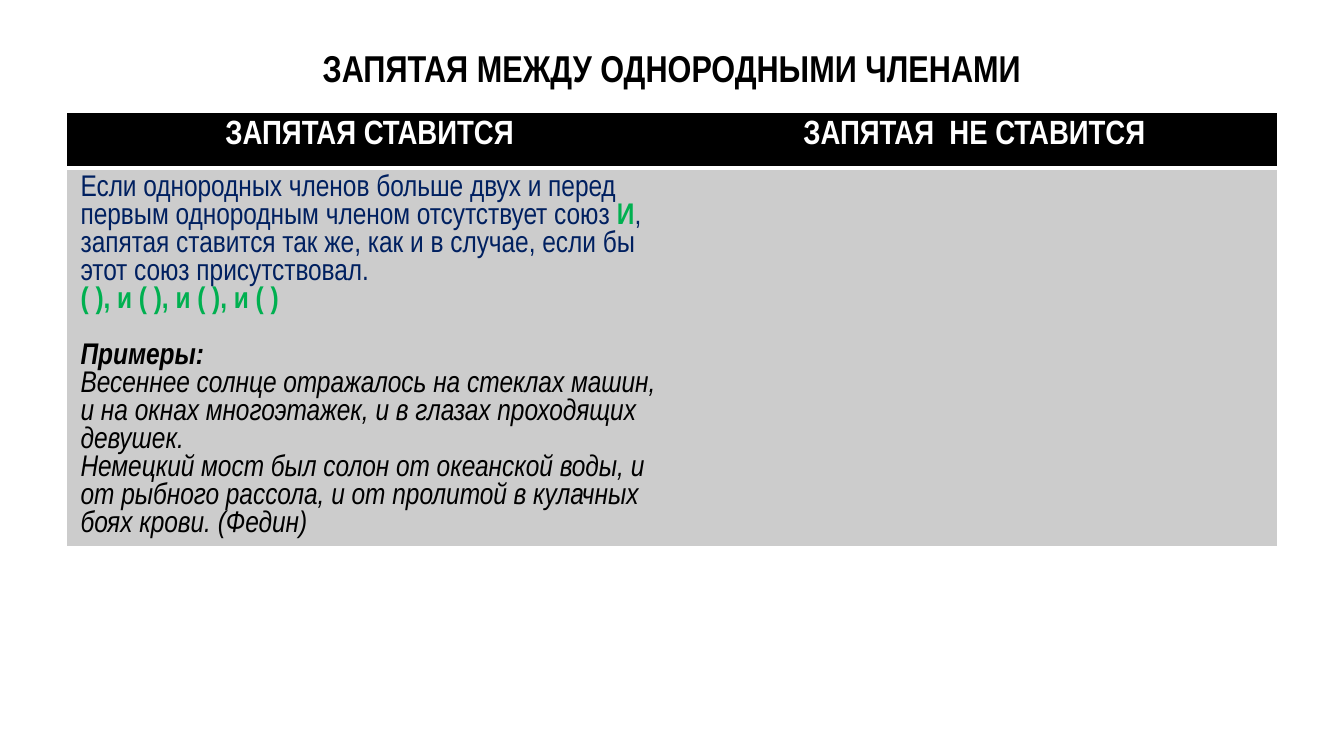
from dataclasses import dataclass

from lxml.etree import SubElement
from pptx import Presentation
from pptx.dml.color import RGBColor
from pptx.enum.text import MSO_ANCHOR, PP_ALIGN
from pptx.oxml.ns import qn
from pptx.util import Pt

NO_STYLE_NO_GRID = "{2D5ABB26-0587-4C30-8999-92F81FD0307C}"


@dataclass(frozen=True)
class Theme:
    font: str = "Arial Narrow"
    title_size: int = 20
    header_size: int = 18
    body_size: int = 16
    black: str = "000000"
    white: str = "FFFFFF"
    navy: str = "002060"
    green: str = "00B050"
    grey: str = "CCCCCC"


THEME = Theme()

HEADERS = ["ЗАПЯТАЯ СТАВИТСЯ", "ЗАПЯТАЯ  НЕ СТАВИТСЯ"]

# Each paragraph: space before, then runs of (text, colour, bold, italic)
RULE_PARAGRAPHS = [
    (0, [
        ("Если однородных членов больше двух и перед первым однородным "
         "членом отсутствует союз ", THEME.navy, False, False),
        ("И", THEME.green, True, False),
        (", запятая ставится так же, как и в случае, если бы этот союз "
         "присутствовал.", THEME.navy, False, False),
    ]),
    (0, [("( ), и ( ), и ( ), и ( )", THEME.green, True, False)]),
    (15, [("Примеры:", THEME.black, True, True)]),
    (0, [("Весеннее солнце отражалось на стеклах машин, и на окнах "
          "многоэтажек, и в глазах проходящих девушек.",
          THEME.black, False, True)]),
    (0, [("Немецкий мост был солон от океанской воды, и от рыбного рассола, "
          "и от пролитой в кулачных боях крови. (Федин)",
          THEME.black, False, True)]),
]


def add_run(paragraph, text, size, color, bold=False, italic=False):
    run = paragraph.add_run()
    run.text = text
    font = run.font
    font.name, font.size = THEME.font, Pt(size)
    font.bold, font.italic = bold, italic
    font.color.rgb = RGBColor.from_string(color)


def fill_cell(cell, color):
    cell.fill.solid()
    cell.fill.fore_color.rgb = RGBColor.from_string(color)


def add_bottom_border(cell, color, width):
    line = SubElement(cell._tc.get_or_add_tcPr(), qn("a:lnB"), w=str(Pt(width)))
    fill = SubElement(line, qn("a:solidFill"))
    SubElement(fill, qn("a:srgbClr"), val=color)


def place_title(slide, left, top, width, height):
    title = slide.shapes.title
    title.left, title.top = Pt(left), Pt(top)
    title.width, title.height = Pt(width), Pt(height)
    title.text_frame.vertical_anchor = MSO_ANCHOR.MIDDLE
    paragraph = title.text_frame.paragraphs[0]
    paragraph.alignment = PP_ALIGN.CENTER
    add_run(paragraph, "ЗАПЯТАЯ МЕЖДУ ОДНОРОДНЫМИ ЧЛЕНАМИ",
            THEME.title_size, THEME.black, bold=True)


def place_rules_table(slide, left, top, width, height, header_height):
    frame = slide.shapes.add_table(
        2, len(HEADERS), Pt(left), Pt(top), Pt(width), Pt(height))
    table = frame.table
    table._tbl.tblPr.find(qn("a:tableStyleId")).text = NO_STYLE_NO_GRID
    table.rows[0].height = Pt(header_height)
    table.rows[1].height = Pt(height - header_height)

    # Header row and grey cells below it
    for column, text in enumerate(HEADERS):
        header = table.cell(0, column)
        add_bottom_border(header, THEME.white, 2)
        fill_cell(header, THEME.black)
        paragraph = header.text_frame.paragraphs[0]
        paragraph.alignment = PP_ALIGN.CENTER
        add_run(paragraph, text, THEME.header_size, THEME.white, bold=True)
        fill_cell(table.cell(1, column), THEME.grey)

    # Rule with its pattern and examples
    text_frame = table.cell(1, 0).text_frame
    for index, (space_before, runs) in enumerate(RULE_PARAGRAPHS):
        paragraph = (text_frame.add_paragraph() if index
                     else text_frame.paragraphs[0])
        paragraph.space_before = Pt(space_before)
        for text, color, bold, italic in runs:
            add_run(paragraph, text, THEME.body_size, color, bold, italic)


def main():
    presentation = Presentation()
    presentation.slide_width, presentation.slide_height = Pt(720), Pt(405)
    title_only = presentation.slide_layouts[5]
    slide = presentation.slides.add_slide(title_only)
    place_title(slide, 36, 16.5, 648, 39)
    place_rules_table(slide, 36, 60.5, 648, 232, header_height=29.5)
    presentation.save("out.pptx")


if __name__ == "__main__":
    main()
